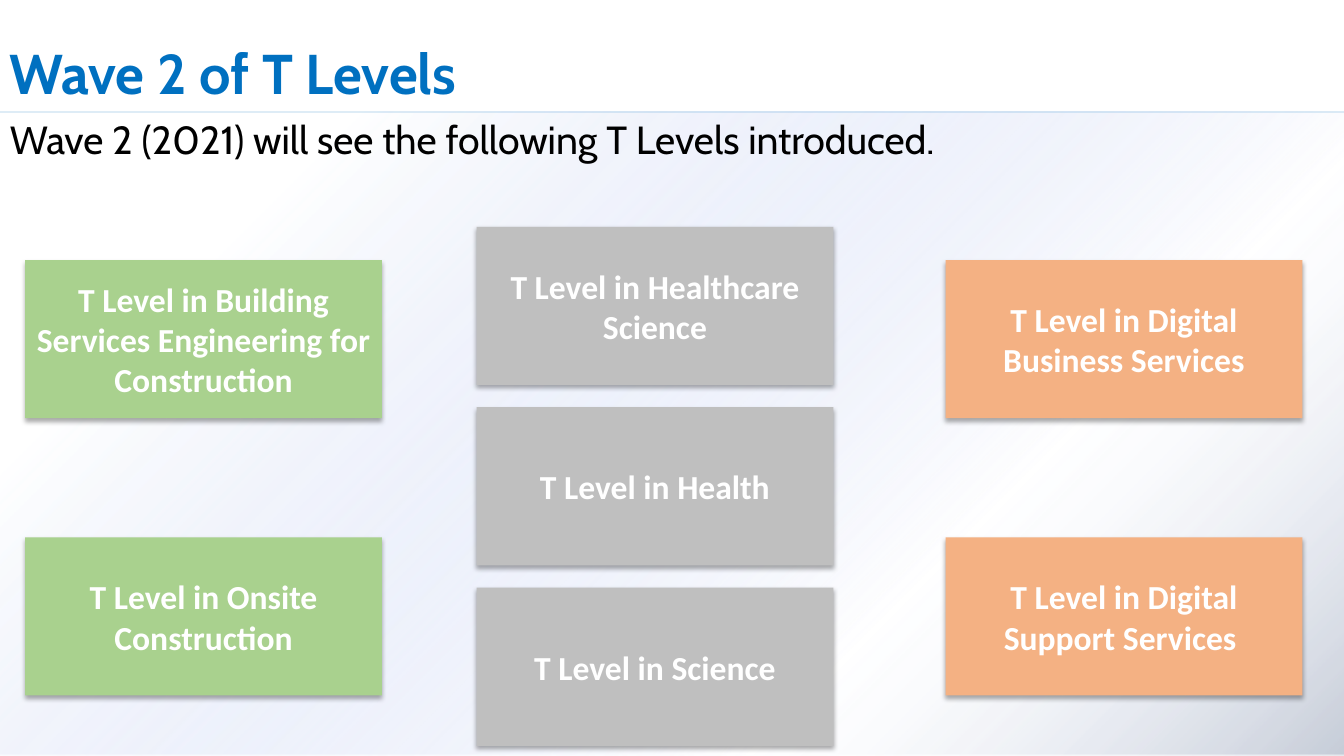
from dataclasses import dataclass

from lxml import etree
from pptx import Presentation
from pptx.dml.color import RGBColor as Rgb
from pptx.enum.shapes import MSO_CONNECTOR as Conn, MSO_SHAPE as Shape
from pptx.enum.text import MSO_ANCHOR as Anchor, PP_ALIGN as Align
from pptx.oxml import parse_xml
from pptx.oxml.ns import nsdecls, qn
from pptx.util import Pt


@dataclass(frozen=True)
class Theme:
    blue: str = "0070C0"
    black: str = "000000"
    white: str = "FFFFFF"
    green: str = "A9D18E"
    grey: str = "BFBFBF"
    orange: str = "F4B183"
    # Offset, colour and opacity, all but the colour in percent
    wash: tuple = (
        (0, "96ABEA", 100), (0, "203864", 25), (30, "B2C2EF", 0),
        (82, "FFFFFF", 86), (99, "FFFFFF", 100),
    )
    head: str = "Cabin"
    body: str = "Calibri"
    title: int = 40
    lead: int = 28
    card: int = 24


THEME = Theme()
WIDE, HIGH = 960, 540
RULE = 80
CARD_W, CARD_H = 254.9, 113

# Left, top, row step, colour and labels of each column
COLS = (
    (18, 185.8, 198, THEME.green, (
        "T Level in Building Services Engineering for Construction",
        "T Level in Onsite Construction")),
    (340.4, 162, 128.9, THEME.grey, (
        "T Level in Healthcare Science",
        "T Level in Health",
        "T Level in Science")),
    (675.4, 185.8, 198, THEME.orange, (
        "T Level in Digital Business Services",
        "T Level in Digital Support Services ")),
)


def points(*nums):
    return [Pt(num) for num in nums]


def tint(color, alpha):
    """Return colour XML with an opacity in percent."""
    return (f'<a:srgbClr {nsdecls("a")} val="{color}">'
            f'<a:alpha val="{alpha * 1000}"/></a:srgbClr>')


def write(shape, text, font, para=None, **frame):
    """Put one formatted paragraph in a shape."""
    box = shape.text_frame
    box.word_wrap = True
    line = box.paragraphs[0]
    run = line.add_run()
    run.text = text
    run.font.color.rgb = Rgb.from_string(font["color"])
    looks = {key: val for key, val in font.items() if key != "color"}
    for item, attrs in ((box, frame), (line, para or {}), (run.font, looks)):
        for key, val in attrs.items():
            setattr(item, key, val)


def add_wash(slide):
    """Shade the area below the title with a mirrored gradient."""
    area = slide.shapes.add_shape(
        Shape.RECTANGLE, *points(0, RULE, WIDE, HIGH - RULE))
    area.shadow.inherit = False
    area.line.fill.background()
    area.fill.background()
    props = area._element.spPr
    props.find(qn("a:xfrm")).set("flipH", "1")
    stops = "".join(f'<a:gs pos="{pos * 1000}">{tint(color, alpha)}</a:gs>'
                    for pos, color, alpha in THEME.wash)
    grad = parse_xml(
        f'<a:gradFill {nsdecls("a")} rotWithShape="1"><a:gsLst>{stops}'
        '</a:gsLst><a:lin ang="18900000" scaled="0"/></a:gradFill>')
    props.replace(props.find(qn("a:noFill")), grad)


def add_rule(slide):
    """Draw the pale line under the title."""
    rule = slide.shapes.add_connector(
        Conn.STRAIGHT, *points(0, RULE, WIDE, RULE))
    rule.line.width = Pt(1)
    rule.line.color.rgb = Rgb.from_string(THEME.blue)
    props = rule._element.spPr
    fill = props.find(qn("a:ln")).find(qn("a:solidFill"))
    fill.replace(fill[0], parse_xml(tint(THEME.blue, 20)))
    etree.SubElement(props, qn("a:effectLst"))


def add_text(slide, place, text, font, **frame):
    box = slide.shapes.add_textbox(*points(*place))
    write(box, text, font, {"line_spacing": 0.9}, **frame)


def add_card(slide, left, top, color, text):
    """Add a filled card with a soft shadow below it."""
    card = slide.shapes.add_shape(
        Shape.RECTANGLE, *points(left, top, CARD_W, CARD_H))
    card.fill.solid()
    card.fill.fore_color.rgb = Rgb.from_string(color)
    card.line.fill.background()
    card.shadow.inherit = False
    card._element.spPr.find(qn("a:effectLst")).append(parse_xml(
        f'<a:outerShdw {nsdecls("a")} blurRad="{Pt(3.5)}" dist="{Pt(2.2)}" '
        'dir="5400000" algn="ctr" rotWithShape="0">'
        f'{tint(THEME.black, 32)}</a:outerShdw>'))
    font = {"name": THEME.body, "size": Pt(THEME.card), "bold": True,
            "color": THEME.white}
    write(card, text, font, {"alignment": Align.CENTER},
          vertical_anchor=Anchor.MIDDLE)


def main():
    deck = Presentation()
    deck.slide_width, deck.slide_height = points(WIDE, HIGH)
    slide = deck.slides.add_slide(deck.slide_layouts[6])

    # Backdrop
    add_wash(slide)
    add_rule(slide)

    # Title and lead
    add_text(slide, (0, 2.2, 828, 104.4), "Wave 2 of T Levels",
             {"name": THEME.head, "size": Pt(THEME.title), "bold": True,
              "color": THEME.blue}, vertical_anchor=Anchor.MIDDLE)
    add_text(slide, (0, 82.8, WIDE, 72.7),
             "Wave 2 (2021) will see the following T Levels introduced.",
             {"name": THEME.head, "size": Pt(THEME.lead),
              "color": THEME.black}, vertical_anchor=Anchor.TOP)

    # Columns of cards
    for left, top, step, color, labels in COLS:
        for row, text in enumerate(labels):
            add_card(slide, left, top + row * step, color, text)

    deck.save("out.pptx")


if __name__ == "__main__":
    main()
